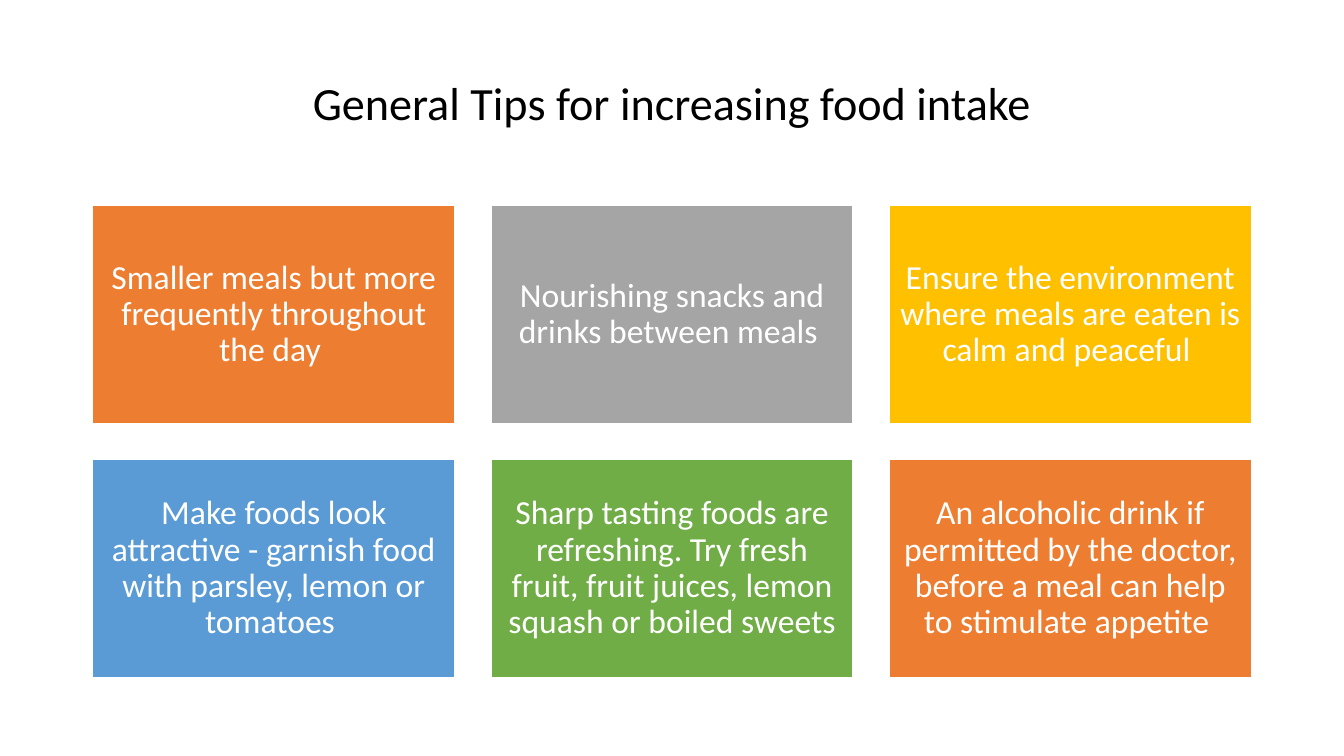
from dataclasses import dataclass

from pptx import Presentation
from pptx.dml.color import RGBColor
from pptx.enum.shapes import MSO_SHAPE
from pptx.enum.text import MSO_ANCHOR, PP_ALIGN
from pptx.util import Inches, Pt


@dataclass(frozen=True)
class Theme:
    """Colours, font and type sizes of the slide."""
    font: str = "Calibri"
    title_size: int = 33
    card_size: int = 24
    black: str = "000000"
    white: str = "FFFFFF"
    orange: str = "ED7D31"
    grey: str = "A5A5A5"
    gold: str = "FFC000"
    blue: str = "5B9BD5"
    green: str = "70AD47"


THEME = Theme()
TIPS = [
    ("Smaller meals but more frequently throughout the day ", THEME.orange),
    ("Nourishing snacks and drinks between meals ", THEME.grey),
    ("Ensure the environment where meals are eaten is calm and peaceful ", THEME.gold),
    ("Make foods look attractive - garnish food with parsley, lemon or tomatoes ", THEME.blue),
    ("Sharp tasting foods are refreshing. Try fresh fruit, fruit juices, lemon squash or boiled sweets",
     THEME.green),
    ("An alcoholic drink if permitted by the doctor, before a meal can help to stimulate appetite ",
     THEME.orange),
]
COLUMNS = 3
GRID_LEFT, GRID_TOP = 0.92, 2.04
CARD_WIDTH, CARD_HEIGHT, GAP = 3.59, 2.16, 0.36


def write_centred(shape, text, size, colour):
    """Write one centred paragraph in the middle of a shape."""
    frame = shape.text_frame
    frame.word_wrap = True
    frame.vertical_anchor = MSO_ANCHOR.MIDDLE
    para = frame.paragraphs[0]
    para.alignment = PP_ALIGN.CENTER
    para.line_spacing = 0.9
    span = para.add_run()
    span.text = text
    span.font.name = THEME.font
    span.font.size = Pt(size)
    span.font.color.rgb = RGBColor.from_string(colour)


def add_title(page, text):
    """Place and fill the title placeholder."""
    title = page.shapes.title
    title.left, title.top = Inches(0.7), Inches(0.43)
    title.width, title.height = Inches(11.93), Inches(1.24)
    write_centred(title, text, THEME.title_size, THEME.black)


def add_card(page, left, top, text, colour):
    """Add a coloured card holding one tip."""
    card = page.shapes.add_shape(MSO_SHAPE.RECTANGLE, Inches(left), Inches(top),
                                 Inches(CARD_WIDTH), Inches(CARD_HEIGHT))
    card.shadow.inherit = False
    card.fill.solid()
    card.fill.fore_color.rgb = RGBColor.from_string(colour)
    card.line.color.rgb = RGBColor.from_string(THEME.white)
    card.line.width = Pt(1)
    frame = card.text_frame
    frame.margin_left = frame.margin_right = Inches(0.1)
    frame.margin_top = frame.margin_bottom = Inches(0.1)
    write_centred(card, text, THEME.card_size, THEME.white)


def main():
    """Build the slide and save it."""
    deck = Presentation()
    deck.slide_width, deck.slide_height = Inches(13.33), Inches(7.5)
    page = deck.slides.add_slide(deck.slide_layouts[5])
    add_title(page, "General Tips for increasing food intake")
    for index, (text, colour) in enumerate(TIPS):
        row, column = divmod(index, COLUMNS)
        add_card(page, GRID_LEFT + column * (CARD_WIDTH + GAP),
                 GRID_TOP + row * (CARD_HEIGHT + GAP), text, colour)
    deck.save("out.pptx")


if __name__ == "__main__":
    main()
